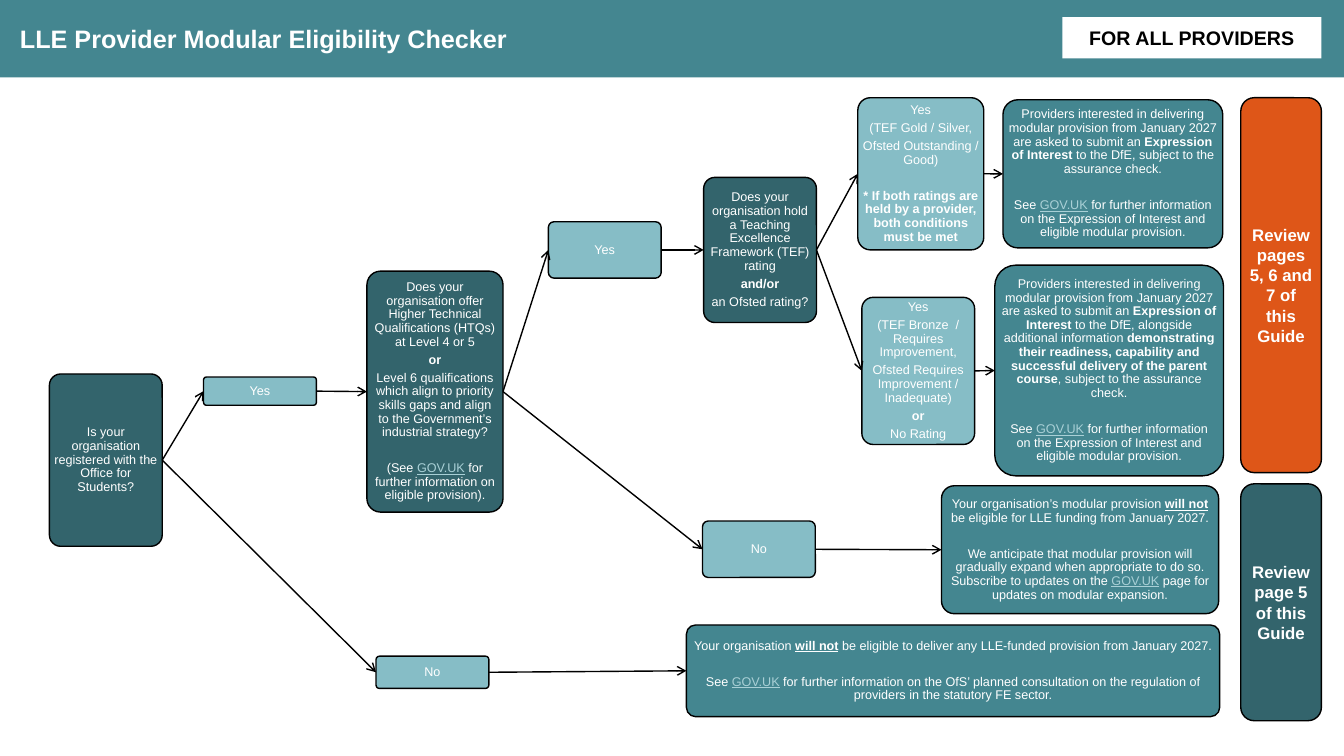
from lxml.etree import SubElement
from pptx import Presentation
from pptx.dml.color import RGBColor
from pptx.enum.shapes import MSO_CONNECTOR, MSO_SHAPE
from pptx.enum.text import MSO_ANCHOR, PP_ALIGN
from pptx.oxml.ns import qn
from pptx.util import Pt

DARK, TEAL, LIGHT, ORANGE = "33646C", "448690", "86BDC6", "DE5618"
WHITE, BLACK, LINK = "FFFFFF", "000000", "A9D0D6"
LEFT_SIDE, RIGHT_SIDE = 1, 3
ANSWER_WIDTH = 80.6
GAP = None
GOV_UK = ("GOV.UK", "link")
WILL_NOT = ("will not", "stress")
INTEREST = ("Expression of Interest ", "bold")
SUBMIT = ("Providers interested in delivering modular provision from January 2027 "
          "are asked to submit an ")
SEE_INTEREST = ["See ", GOV_UK, " for further information on the Expression of Interest "
                "and eligible modular provision."]

STEPS = {
    "registered": (DARK, (35.3, 267.1, ANSWER_WIDTH, 123.1), [
        ["Is your organisation registered with the Office for Students?"]]),
    "registered yes": (LIGHT, (145.4, 269.3, ANSWER_WIDTH, 20.2), [["Yes"]]),
    "registered no": (LIGHT, (268.6, 468.7, ANSWER_WIDTH, 23), [["No"]]),
    "levels": (DARK, (262.1, 193.7, 97.2, 172.1), [
        ["Does your organisation offer Higher Technical Qualifications (HTQs) at Level 4 or 5"],
        [("or", "bold")],
        ["Level 6 qualifications which align to priority skills gaps and align to "
         "the Government’s industrial strategy?"],
        GAP,
        ["(See ", GOV_UK, " for further information on eligible provision)."]]),
    "levels yes": (LIGHT, (391.7, 158.4, ANSWER_WIDTH, 40.3), [["Yes"]]),
    "levels no": (LIGHT, (501.8, 372.2, ANSWER_WIDTH, 40.3), [["No"]]),
    "rating": (DARK, (502.6, 126.7, ANSWER_WIDTH, 103.7), [
        ["Does your organisation hold a Teaching Excellence Framework (TEF) rating"],
        [("and/or", "bold")],
        ["an Ofsted rating?"]]),
    "high rating": (LIGHT, (612.7, 69.8, 90, 108.7), [
        ["Yes"],
        ["(TEF Gold / Silver,"],
        ["Ofsted Outstanding / Good)"],
        GAP,
        [("* If both ratings are held by a provider, both conditions must be met", "bold")]]),
    "low rating": (LIGHT, (615.6, 212.4, ANSWER_WIDTH, 105.1), [
        ["Yes"],
        ["(TEF Bronze  / Requires Improvement,"],
        ["Ofsted Requires Improvement / Inadequate)"],
        [("or", "bold")],
        ["No Rating"]]),
    "interest": (TEAL, (716.4, 71.3, 157, 105.8), [
        [SUBMIT, INTEREST, "to the DfE, subject to the assurance check."],
        GAP,
        SEE_INTEREST]),
    "readiness": (TEAL, (710.6, 189.4, 163.4, 150.5), [
        [SUBMIT, INTEREST, "to the DfE, alongside additional information ",
         ("demonstrating their readiness, capability and successful delivery "
          "of the parent course", "bold"),
         ", subject to the assurance check."],
        GAP,
        SEE_INTEREST]),
    "no modular funding": (TEAL, (672.5, 347, 198, 91.4), [
        ["Your organisation’s modular provision ", WILL_NOT,
         " be eligible for LLE funding from January 2027."],
        GAP,
        ["We anticipate that modular provision will gradually expand when appropriate "
         "to do so. Subscribe to updates on the ", GOV_UK,
         " page for updates on modular expansion."]]),
    "no funding": (TEAL, (490.3, 446.4, 380.9, 65.5), [
        ["Your organisation ", WILL_NOT,
         " be eligible to deliver any LLE-funded provision from January 2027."],
        GAP,
        ["See ", GOV_UK, " for further information on the OfS’ planned consultation on "
         "the regulation of providers in the statutory FE sector."]]),
}

ROUTES = [
    ("registered", "registered yes"), ("registered yes", "levels"),
    ("levels", "levels yes"), ("levels yes", "rating"),
    ("rating", "high rating"), ("high rating", "interest"),
    ("rating", "low rating"), ("low rating", "readiness"),
    ("levels", "levels no"), ("levels no", "no modular funding"),
    ("registered", "registered no"), ("registered no", "no funding"),
]


def colour(value):
    """Return the colour for a hex string."""
    return RGBColor.from_string(value)


def add_box(page, kind, area, fill, outlined=True):
    """Add a filled shape, with a thin black outline if asked."""
    box = page.shapes.add_shape(kind, *map(Pt, area))
    box.shadow.inherit = False
    box.fill.solid()
    box.fill.fore_color.rgb = colour(fill)
    if outlined:
        box.line.color.rgb = colour(BLACK)
        box.line.width = Pt(1)
    else:
        box.line.fill.background()
    return box


def set_frame(box, margin):
    """Wrap and centre a box's text vertically, with equal margins."""
    frame = box.text_frame
    frame.word_wrap = True
    frame.vertical_anchor = MSO_ANCHOR.MIDDLE
    frame.margin_left = frame.margin_right = Pt(margin)
    frame.margin_top = frame.margin_bottom = Pt(margin)
    return frame


def style_paragraph(para, size, shade, bold=False, align=PP_ALIGN.CENTER):
    """Set the alignment and font of a paragraph."""
    para.alignment = align
    para.font.name = "Arial"
    para.font.size = Pt(size)
    para.font.bold = bold
    para.font.color.rgb = colour(shade)


def add_span(para, text, style):
    """Add a run in one of the styles plain, bold, stress or link."""
    span = para.add_run()
    span.text = text
    if style in ("bold", "stress"):
        span.font.bold = True
    if style in ("stress", "link"):
        span.font.underline = True
    if style == "link":
        span.font.color.rgb = colour(LINK)


def add_step(page, fill, area, content):
    """Add one rounded step of the flowchart with its paragraphs."""
    box = add_box(page, MSO_SHAPE.ROUNDED_RECTANGLE, area, fill)
    box.adjustments[0] = 0.1
    frame = set_frame(box, 0.72)
    for index, spans in enumerate(content):
        if spans is GAP:
            continue
        para = frame.add_paragraph() if index else frame.paragraphs[0]
        para.line_spacing = 0.9
        para.space_after = Pt(3.15)
        if index and content[index - 1] is GAP:
            para.space_before = Pt(12.75)
        style_paragraph(para, 9, WHITE)
        for span in spans:
            text, style = (span, "plain") if isinstance(span, str) else span
            add_span(para, text, style)
    return box


def add_arrow(page, start, end):
    """Join the right side of one step to the left side of the next."""
    arrow = page.shapes.add_connector(MSO_CONNECTOR.STRAIGHT, 0, 0, 0, 0)
    arrow.begin_connect(start, RIGHT_SIDE)
    arrow.end_connect(end, LEFT_SIDE)
    arrow.line.color.rgb = colour(BLACK)
    arrow.line.width = Pt(1)
    SubElement(arrow.line._get_or_add_ln(), qn("a:tailEnd"), type="arrow")
    SubElement(arrow._element.spPr, qn("a:effectLst"))


def add_label(box, text, size, shade):
    """Write one bold centred line of text in a box."""
    para = set_frame(box, 3.6).paragraphs[0]
    para.text = text
    style_paragraph(para, size, shade, bold=True)


def add_header(page):
    """Add the banner with the title and the audience tag."""
    add_box(page, MSO_SHAPE.RECTANGLE, (0, 0, 960, 55.4), TEAL, outlined=False)
    title = page.shapes.add_textbox(Pt(7.2), Pt(0), Pt(740), Pt(41.8)).text_frame
    title.word_wrap = True
    title.vertical_anchor = MSO_ANCHOR.BOTTOM
    title.text = "LLE Provider Modular Eligibility Checker"
    style_paragraph(title.paragraphs[0], 18, WHITE, bold=True, align=PP_ALIGN.LEFT)
    tag = add_box(page, MSO_SHAPE.RECTANGLE, (758.9, 12.2, 185, 29.5), WHITE, outlined=False)
    add_label(tag, "FOR ALL PROVIDERS", 14, BLACK)


def add_review(page, top, height, fill, text):
    """Add a review bar at the right edge."""
    bar = add_box(page, MSO_SHAPE.ROUNDED_RECTANGLE, (886.3, top, 57.6, height), fill)
    add_label(bar, text, 12, WHITE)


def main():
    """Build the eligibility checker slide."""
    deck = Presentation()
    deck.slide_width, deck.slide_height = Pt(960), Pt(540)
    page = deck.slides.add_slide(deck.slide_layouts[6])
    add_header(page)
    boxes = {name: add_step(page, *step) for name, step in STEPS.items()}
    for start, end in ROUTES:
        add_arrow(page, boxes[start], boxes[end])
    add_review(page, 69.8, 267.8, ORANGE, "Review pages 5, 6 and 7 of this Guide")
    add_review(page, 345.6, 169.2, DARK, "Review page 5 of this Guide")
    deck.save("out.pptx")


if __name__ == "__main__":
    main()
